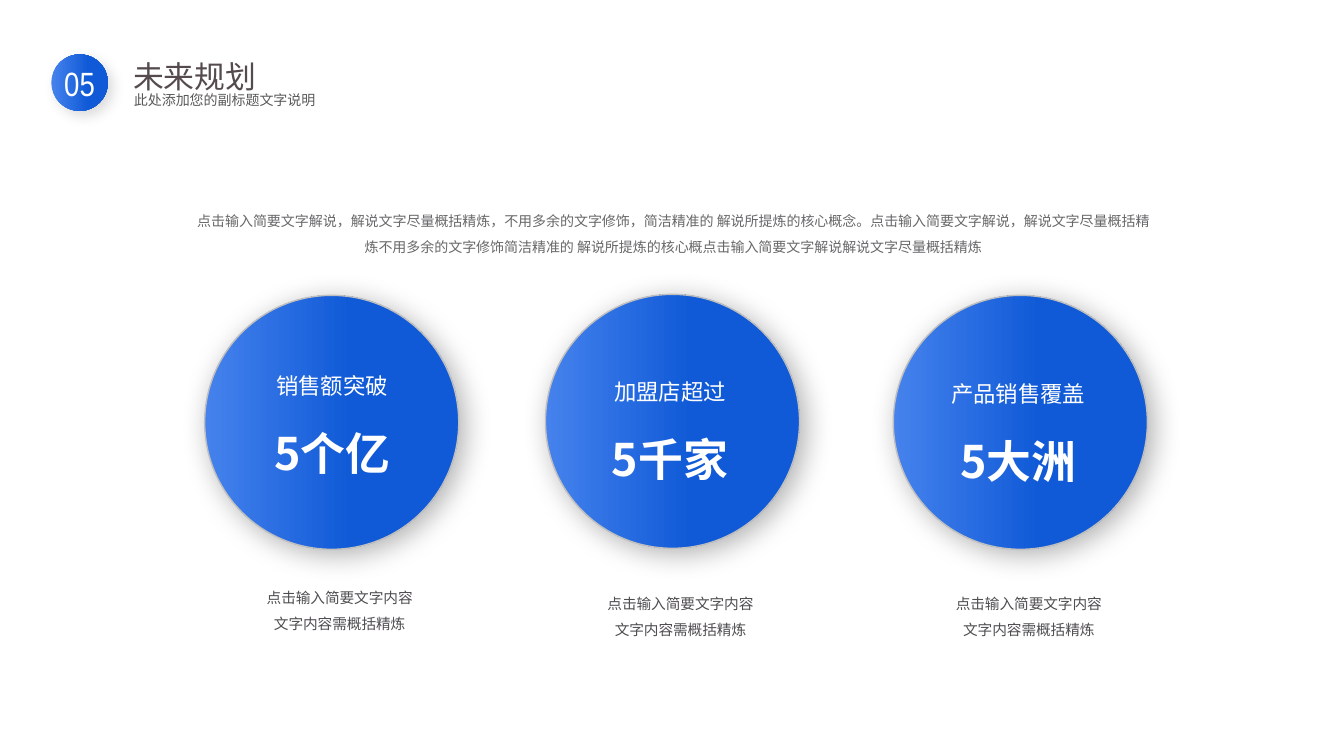
import pptx
import pptx.dml.color
import pptx.enum.shapes
import pptx.enum.text
import pptx.oxml
import pptx.oxml.ns
import pptx.util
from pptx.util import Inches

FONT = "Noto Sans CJK SC"
CENTER = pptx.enum.text.PP_ALIGN.CENTER
LEFT = pptx.enum.text.PP_ALIGN.LEFT
TOP = pptx.enum.text.MSO_ANCHOR.TOP
MIDDLE = pptx.enum.text.MSO_ANCHOR.MIDDLE


def color(hex_value):
    return pptx.dml.color.RGBColor.from_string(hex_value)


def write_text(shape, lines, hex_value, alignment=CENTER, spacing=1.5, inset=0.0,
               wrap=True, anchor=TOP, font_name=FONT):
    frame = shape.text_frame
    frame_format = {
        "word_wrap": wrap,
        "vertical_anchor": anchor,
        "auto_size": pptx.enum.text.MSO_AUTO_SIZE.NONE,
        "margin_left": Inches(inset),
        "margin_right": Inches(inset),
        "margin_top": Inches(inset / 2),
        "margin_bottom": Inches(inset / 2),
    }
    for name, value in frame_format.items():
        setattr(frame, name, value)
    frame.text = "\n".join(text for text, size, bold in lines)
    for paragraph, (text, size, bold) in zip(frame.paragraphs, lines):
        paragraph.alignment = alignment
        paragraph.line_spacing = spacing
        run = paragraph.runs[0]
        font_format = {"name": font_name, "size": pptx.util.Pt(size), "bold": bold}
        for name, value in font_format.items():
            setattr(run.font, name, value)
        run.font.color.rgb = color(hex_value)
        east_asian = pptx.oxml.parse_xml(
            f'<a:ea {pptx.oxml.ns.nsdecls("a")} typeface="{font_name}"/>')
        run.font._element.find(pptx.oxml.ns.qn("a:latin")).addnext(east_asian)


presentation = pptx.Presentation()
presentation.slide_width = Inches(13.33)
presentation.slide_height = Inches(7.5)
slide = presentation.slides.add_slide(presentation.slide_layouts[5])

big_circle = {"size": 2.52, "stops": (0, 0.58), "outline": "BFBFBF",
              "opacity": 30, "blur": 20}
badge_circle = {"size": 0.56, "stops": (0.01, 0.66), "outline": None,
                "opacity": 15, "blur": 10}
circles = [
    (2.03, 2.93, big_circle),
    (5.41, 2.92, big_circle),
    (8.86, 2.93, big_circle),
    (0.51, 0.54, badge_circle),
]
for left, top, look in circles:
    circle = slide.shapes.add_shape(
        pptx.enum.shapes.MSO_SHAPE.OVAL,
        Inches(left), Inches(top), Inches(look["size"]), Inches(look["size"]))
    circle.fill.gradient()
    circle.fill.gradient_angle = 0
    for stop, position, hex_value in zip(
            circle.fill.gradient_stops, look["stops"], ("4582ED", "105AD7")):
        stop.position = position
        stop.color.rgb = color(hex_value)
    if look["outline"]:
        circle.line.color.rgb = color(look["outline"])
        circle.line.width = pptx.util.Pt(1)
    else:
        circle.line.fill.background()
    circle.shadow.inherit = False
    effects = circle._element.spPr.find(pptx.oxml.ns.qn("a:effectLst"))
    effects.append(pptx.oxml.parse_xml(
        f'<a:outerShdw {pptx.oxml.ns.nsdecls("a")} blurRad="{pptx.util.Pt(look["blur"])}" '
        f'dist="{pptx.util.Pt(5)}" dir="2700000" algn="tl" rotWithShape="0">'
        f'<a:srgbClr val="000000"><a:alpha val="{look["opacity"] * 1000}"/></a:srgbClr>'
        '</a:outerShdw>'))
    if look is badge_circle:
        write_text(circle, [("05", 24, False)], "FFFFFF", spacing=1.0, inset=0.1,
                   wrap=False, anchor=MIDDLE, font_name="Arial Narrow")

goals = [
    ("销售额突破", "5个亿", (2.16, 3.56, 2.27), (2.24, 5.75, 2.26)),
    ("加盟店超过", "5千家", (5.68, 3.62, 1.93), (5.71, 5.81, 2.08)),
    ("产品销售覆盖", "5大洲", (9.13, 3.64, 1.94), (9.06, 5.81, 2.29)),
]
for label, target, (left, top, width), (note_left, note_top, note_width) in goals:
    goal_box = slide.shapes.add_textbox(
        Inches(left), Inches(top), Inches(width), Inches(1.21))
    write_text(goal_box, [(label, 16, False), (target, 32, True)], "FFFFFF")
    note_box = slide.shapes.add_textbox(
        Inches(note_left), Inches(note_top), Inches(note_width), Inches(0.53))
    write_text(note_box, [("点击输入简要文字内容", 10.5, False),
                          ("文字内容需概括精炼", 10.5, False)], "4F4D50")

summary = (
    "点击输入简要文字解说，解说文字尽量概括精炼，不用多余的文字修饰，简洁精准的 "
    "解说所提炼的核心概念。点击输入简要文字解说，解说文字尽量概括精炼"
    "不用多余的文字修饰简洁精准的 解说所提炼的核心概点击输入简要文字解说解说文字尽量概括精炼"
)
summary_box = slide.shapes.add_textbox(
    Inches(1.82), Inches(1.98), Inches(9.71), Inches(0.61))
write_text(summary_box, [(summary, 10, False)], "686769", inset=0.1)

title = slide.shapes.title
title_place = {"left": 1.22, "top": 0.41, "width": 1.44, "height": 0.58}
for name, value in title_place.items():
    setattr(title, name, Inches(value))
write_text(title, [("未来规划", 22, False)], "554B4F", alignment=LEFT,
           spacing=1.3, inset=0.1, wrap=False)

subtitle_box = slide.shapes.add_textbox(
    Inches(1.23), Inches(0.81), Inches(3.38), Inches(0.32))
write_text(subtitle_box, [("此处添加您的副标题文字说明", 10, False)], "595959",
           alignment=LEFT, spacing=1.3, inset=0.1)

presentation.save("out.pptx")
